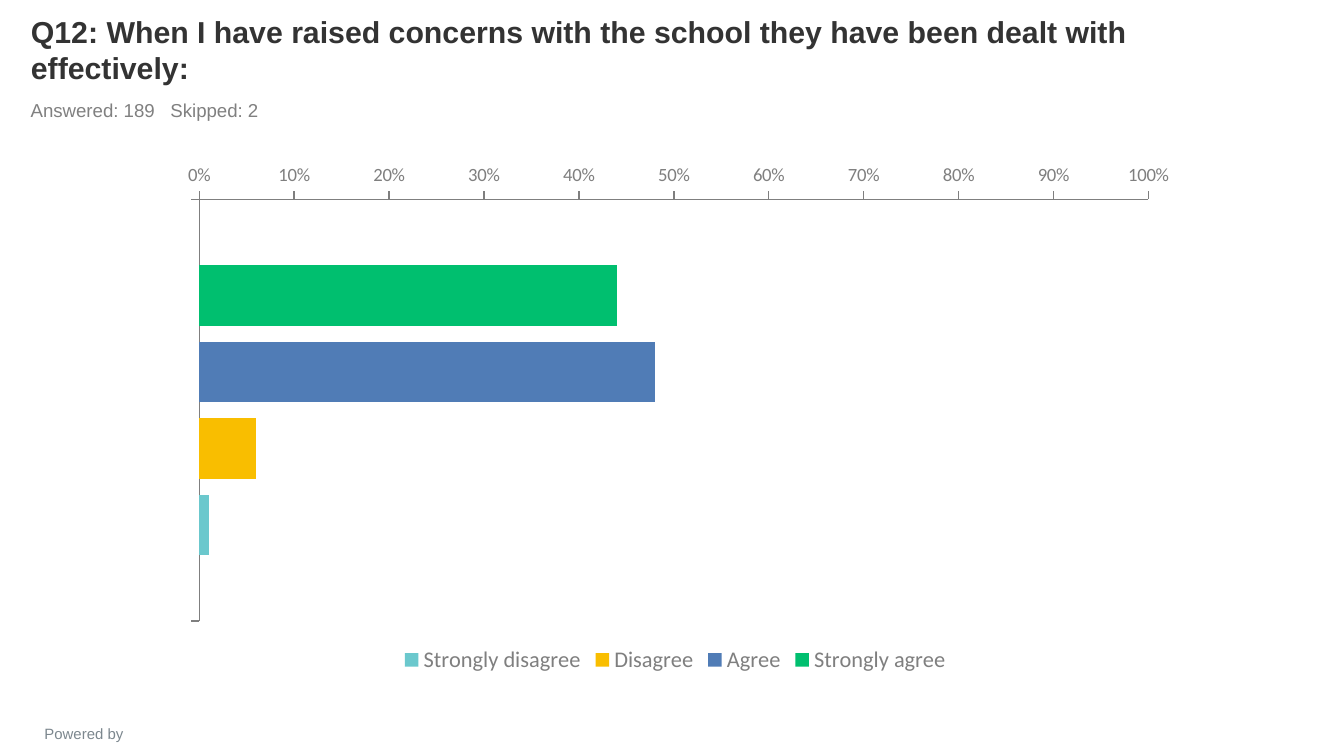
"""Build the slide of survey answers to question 12."""
import pptx
import pptx.chart.data
import pptx.dml.color
import pptx.enum.chart
import pptx.enum.text
import pptx.oxml
import pptx.oxml.ns
import pptx.util

Inches, Pt = pptx.util.Inches, pptx.util.Pt
RGBColor = pptx.dml.color.RGBColor
PP_ALIGN = pptx.enum.text.PP_ALIGN
MSO_ANCHOR = pptx.enum.text.MSO_ANCHOR

DARK = RGBColor(0x33, 0x33, 0x33)
GRAY = RGBColor(0x80, 0x80, 0x80)
AXIS_GRAY = RGBColor(0x7F, 0x7F, 0x7F)
SLATE = RGBColor(0x7C, 0x87, 0x8E)

QUESTION = "Q12: When I have raised concerns with the school they have been dealt with effectively:"
COUNTS = "Answered: 189\tSkipped: 2"
CREDIT = "Powered by"
ANSWERS = [
    ("Strongly agree", 0.44, RGBColor(0x00, 0xBF, 0x6F)),
    ("Agree", 0.48, RGBColor(0x50, 0x7C, 0xB6)),
    ("Disagree", 0.06, RGBColor(0xF9, 0xBE, 0x00)),
    ("Strongly disagree", 0.01, RGBColor(0x6B, 0xC8, 0xCD)),
]


def style_font(font, name, size, color, bold=False):
    font.name, font.size, font.bold = name, Pt(size), bold
    font.color.rgb = color


def write(shape, text, size, color, bold=False, align=PP_ALIGN.LEFT, anchor=MSO_ANCHOR.TOP, tab=None):
    frame = shape.text_frame
    frame.word_wrap = True
    frame.auto_size = pptx.enum.text.MSO_AUTO_SIZE.NONE
    frame.vertical_anchor = anchor
    frame.text = text
    paragraph = frame.paragraphs[0]
    paragraph.alignment = align
    if tab is not None:
        namespace = pptx.oxml.ns.nsdecls("a")
        paragraph._p.get_or_add_pPr().append(pptx.oxml.parse_xml(
            f'<a:tabLst {namespace}><a:tab pos="{int(tab)}" algn="l"/></a:tabLst>'))
    style_font(paragraph.font, "Arial", size, color, bold)


def style_axis(axis):
    axis.has_major_gridlines = False
    axis.major_tick_mark = pptx.enum.chart.XL_TICK_MARK.OUTSIDE
    axis.minor_tick_mark = pptx.enum.chart.XL_TICK_MARK.NONE
    axis.format.line.color.rgb = AXIS_GRAY
    axis.format.line.width = Pt(0.75)
    style_font(axis.tick_labels.font, "Calibri", 10, AXIS_GRAY)


def add_answer_chart(slide):
    answer_data = pptx.chart.data.CategoryChartData(number_format="0%")
    answer_data.categories = [" "]
    for answer, share, _ in ANSWERS:
        answer_data.add_series(answer, [share])
    chart = slide.shapes.add_chart(
        pptx.enum.chart.XL_CHART_TYPE.BAR_CLUSTERED,
        Inches(1.2), Inches(1.15), Inches(7.65), Inches(3.9), answer_data).chart
    chart.has_title = False
    style_font(chart.font, "Calibri", 18, DARK)

    bars = chart.plots[0]
    bars.gap_width, bars.overlap, bars.vary_by_categories = 219, -27, False
    for series, (_, _, color) in zip(bars.series, ANSWERS):
        series.format.fill.solid()
        series.format.fill.fore_color.rgb = color
        series.invert_if_negative = False

    answer_axis, share_axis = chart.category_axis, chart.value_axis
    style_axis(answer_axis)
    style_axis(share_axis)
    answer_axis.reverse_order = True
    answer_axis.crosses = pptx.enum.chart.XL_AXIS_CROSSES.MINIMUM
    answer_axis.tick_label_position = pptx.enum.chart.XL_TICK_LABEL_POSITION.LOW
    share_axis.minimum_scale, share_axis.maximum_scale, share_axis.major_unit = 0, 1, 0.1
    share_axis.tick_labels.number_format = "0%"
    share_axis.tick_labels.number_format_is_linked = False

    chart.has_legend = True
    chart.legend.position = pptx.enum.chart.XL_LEGEND_POSITION.BOTTOM
    chart.legend.include_in_layout = False
    style_font(chart.legend.font, "Calibri", 12, AXIS_GRAY)


def main():
    deck = pptx.Presentation()
    deck.slide_width = Inches(10)
    deck.slide_height = deck.slide_width * 9 // 16
    slide = deck.slides.add_slide(deck.slide_layouts[5])

    question = slide.shapes.title
    question.left, question.top = Inches(0.13), Inches(0.09)
    question.width, question.height = Inches(9), Inches(0.6)
    write(question, QUESTION, 16.2, DARK, bold=True, anchor=MSO_ANCHOR.BOTTOM)

    counts = slide.shapes.add_textbox(Inches(0.13), Inches(0.69), Inches(9), Inches(0.26))
    write(counts, COUNTS, 10, GRAY, tab=Inches(1.04))

    credit = slide.shapes.add_textbox(Inches(0.05), Inches(5.34), Inches(1.15), Inches(0.18))
    write(credit, CREDIT, 8, SLATE, align=PP_ALIGN.CENTER)

    add_answer_chart(slide)
    deck.save("out.pptx")


if __name__ == "__main__":
    main()
